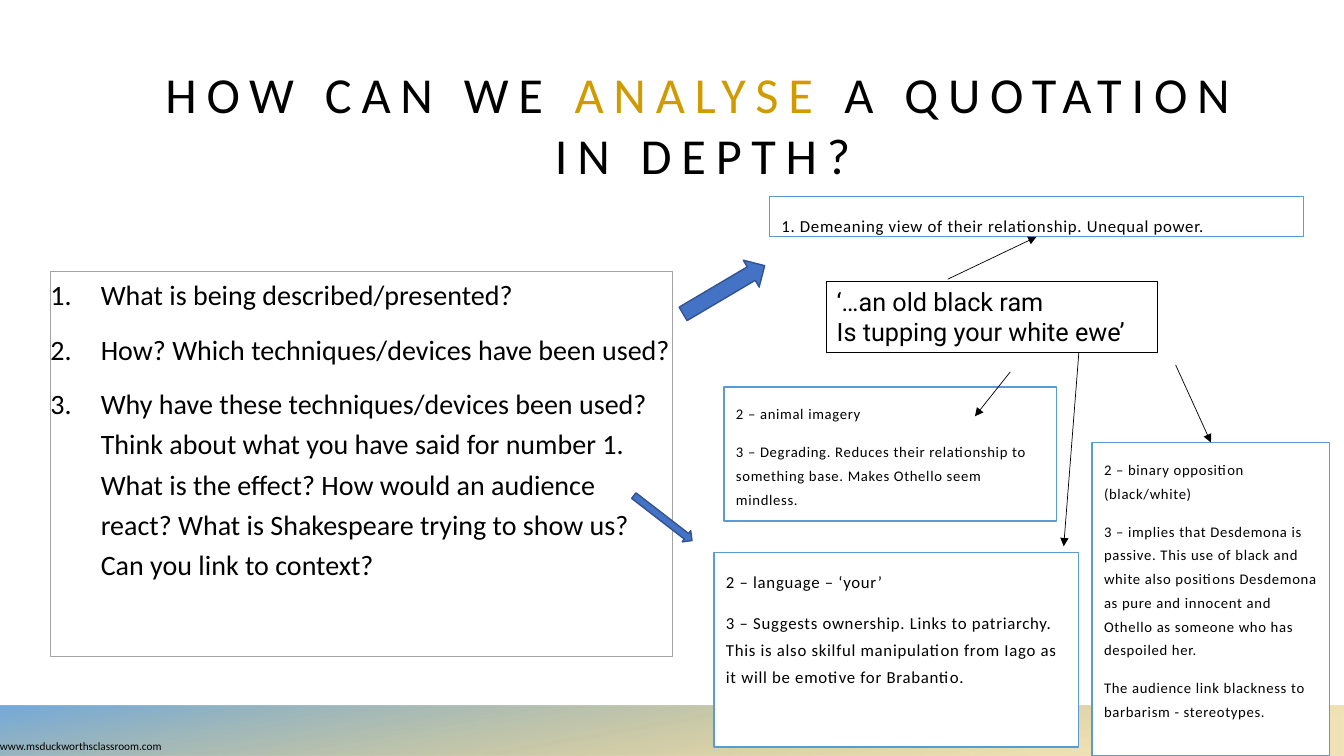
import pptx
import pptx.util
import pptx.dml.color
import pptx.enum.shapes
import pptx.enum.text
import pptx.oxml
import pptx.oxml.ns
from dataclasses import dataclass
from lxml import etree

Inches, Pt = pptx.util.Inches, pptx.util.Pt
SHAPE = pptx.enum.shapes.MSO_SHAPE
ALIGN = pptx.enum.text.PP_ALIGN
ANCHOR = pptx.enum.text.MSO_ANCHOR
qn = pptx.oxml.ns.qn


@dataclass(frozen=True)
class Theme:
    font: str = "Calibri"
    quote_font: str = "Roboto"
    black: str = "000000"
    white: str = "FFFFFF"
    gold: str = "CF9B00"
    blue: str = "5B9BD5"
    grey: str = "A3A3A3"
    arrow: str = "4472C4"
    arrow_edge: str = "325491"
    title: float = 36
    body: float = 20
    quote: float = 18
    note: float = 12
    small_note: float = 10.5
    footer: float = 8


T = Theme()


def rgb(code):
    return pptx.dml.color.RGBColor.from_string(code)


def add_shape(s, kind, box, fill=T.white, line=None, width=1, rot=0):
    sp = s.shapes.add_shape(kind, *map(Inches, box))
    sp.shadow.inherit = False
    sp.rotation = rot
    sp.fill.solid()
    sp.fill.fore_color.rgb = rgb(fill)
    if line:
        sp.line.color.rgb = rgb(line)
        sp.line.width = Pt(width)
    else:
        sp.line.fill.background()
    return sp


def number_paragraph(p, indent):
    pPr = p._p.get_or_add_pPr()
    pPr.set("marL", str(Inches(indent)))
    pPr.set("indent", str(-Inches(indent)))
    etree.SubElement(pPr, qn("a:buFont"), typeface="+mj-lt")
    etree.SubElement(pPr, qn("a:buAutoNum"), type="arabicPeriod")


def write(sp, paragraphs, size, font=T.font, color=T.black, align=ALIGN.LEFT,
          anchor=ANCHOR.TOP, insets=(0, 0, 0, 0), wrap=True, tracking=0,
          leading=None, before=0, indent=None):
    """Each paragraph is a string or a list of (text, color) runs."""
    tf = sp.text_frame
    tf.word_wrap = wrap
    tf.vertical_anchor = anchor
    (tf.margin_left, tf.margin_top,
     tf.margin_right, tf.margin_bottom) = map(Inches, insets)
    for i, runs in enumerate(paragraphs):
        p = tf.add_paragraph() if i else tf.paragraphs[0]
        p.alignment = align
        if leading:
            p.line_spacing = leading
        if i and before:
            p.space_before = Pt(before)
        if indent:
            number_paragraph(p, indent)
        for text, run_color in [(runs, color)] if isinstance(runs, str) else runs:
            r = p.add_run()
            r.text = text
            r.font.name = font
            r.font.size = Pt(size)
            r.font.color.rgb = rgb(run_color)
            if tracking:
                r._r.get_or_add_rPr().set("spc", str(int(tracking * 100)))


def add_note(s, box, paragraphs, size):
    sp = add_shape(s, SHAPE.RECTANGLE, box, line=T.blue)
    write(sp, paragraphs, size, insets=(0.12, 0.12, 0.12, 0.1),
          tracking=0.5, leading=1.35, before=10)


def add_pointer(s, start, end):
    cx = s.shapes.add_connector(pptx.enum.shapes.MSO_CONNECTOR.STRAIGHT,
                                *map(Inches, start + end))
    cx.line.color.rgb = rgb(T.black)
    cx.line.width = Pt(0.5)
    etree.SubElement(cx.line._get_or_add_ln(), qn("a:tailEnd"), type="triangle")
    etree.SubElement(cx._element.spPr, qn("a:effectLst"))


def add_footer(s):
    band = add_shape(s, SHAPE.RECTANGLE, (0, 7, 13.33, 0.5), rot=180)
    band._element.spPr.find(qn("a:xfrm")).set("flipH", "1")
    band.fill.gradient()
    band.fill.gradient_angle = 260
    stops = ((0.14, T.gold, 28), (1, T.blue, 85))
    for stop, (position, color, opacity) in zip(band.fill.gradient_stops, stops):
        stop.position = position
        stop.color.rgb = rgb(color)
        clr = stop._gs.find(qn("a:srgbClr"))
        etree.SubElement(clr, qn("a:alpha"), val=str(opacity * 1000))
    tb = s.shapes.add_textbox(*map(Inches, (0, 7.29, 1.8, 0.21)))
    write(tb, ["www.msduckworthsclassroom.com"], T.footer, wrap=False,
          insets=(0, 0.05, 0, 0))


def main():
    prs = pptx.Presentation()
    prs.slide_width, prs.slide_height = Inches(13.33), Inches(7.5)
    s = prs.slides.add_slide(prs.slide_layouts[6])
    add_footer(s)

    # Title
    title = add_shape(s, SHAPE.RECTANGLE, (1.37, 0.48, 11.2, 1.35))
    write(title, [[("HOW CAN WE ", T.black), ("ANALYSE ", T.gold),
                   ("A QUOTATION IN DEPTH?", T.black)]], T.title,
          align=ALIGN.CENTER, anchor=ANCHOR.BOTTOM, tracking=7)

    # Numbered questions
    questions = add_shape(s, SHAPE.RECTANGLE, (0.5, 2.69, 6.17, 3.82),
                          line=T.grey, width=0.75)
    write(questions, [
        "What is being described/presented?",
        "How? Which techniques/devices have been used?",
        "Why have these techniques/devices been used? Think about what you "
        "have said for number 1. What is the effect? How would an audience "
        "react? What is Shakespeare trying to show us? Can you link to context?",
    ], T.body, leading=1.2, before=10, indent=0.5)

    # Notes around the quotation
    add_note(s, (7.63, 1.95, 5.3, 0.4),
             ["1. Demeaning view of their relationship. Unequal power."], T.note)
    add_note(s, (10.83, 4.39, 2.36, 3.11), [
        "2 – binary opposition (black/white)",
        "3 – implies that Desdemona is passive. This use of black and white "
        "also positions Desdemona as pure and innocent and Othello as someone "
        "who has despoiled her.",
        "The audience link blackness to barbarism - stereotypes.",
    ], T.small_note)
    add_note(s, (7.18, 3.84, 3.3, 1.33), [
        "2 – animal imagery",
        "3 – Degrading. Reduces their relationship to something base. Makes "
        "Othello seem mindless.",
    ], T.small_note)
    add_note(s, (7.08, 5.48, 3.62, 1.93), [
        "2 – language – ‘your’",
        "3 – Suggests ownership. Links to patriarchy. This is also skilful "
        "manipulation from Iago as it will be emotive for Brabantio.",
    ], T.note)

    # Block arrows from the questions to the notes
    for box, rot in (((6.71, 2.72, 0.94, 0.31), 329.4),
                     ((6.21, 5.07, 0.73, 0.14), 37.7)):
        add_shape(s, SHAPE.RIGHT_ARROW, box, T.arrow, T.arrow_edge, rot=rot)

    # Pointers from the quotation to the notes
    for start, end in (((9.4, 2.77), (10.28, 2.35)),
                       ((11.66, 3.62), (12.01, 4.39)),
                       ((10.02, 3.69), (9.67, 4.13)),
                       ((10.7, 3.5), (10.55, 5.42))):
        add_pointer(s, start, end)

    # Quotation
    quote = add_shape(s, SHAPE.RECTANGLE, (8.2, 2.79, 3.28, 0.71), line=T.black)
    write(quote, ["‘…an old black ram", "Is tupping your white ewe’"], T.quote,
          font=T.quote_font, insets=(0.1, 0.05, 0.1, 0.05), wrap=False)

    prs.save("out.pptx")


if __name__ == "__main__":
    main()
